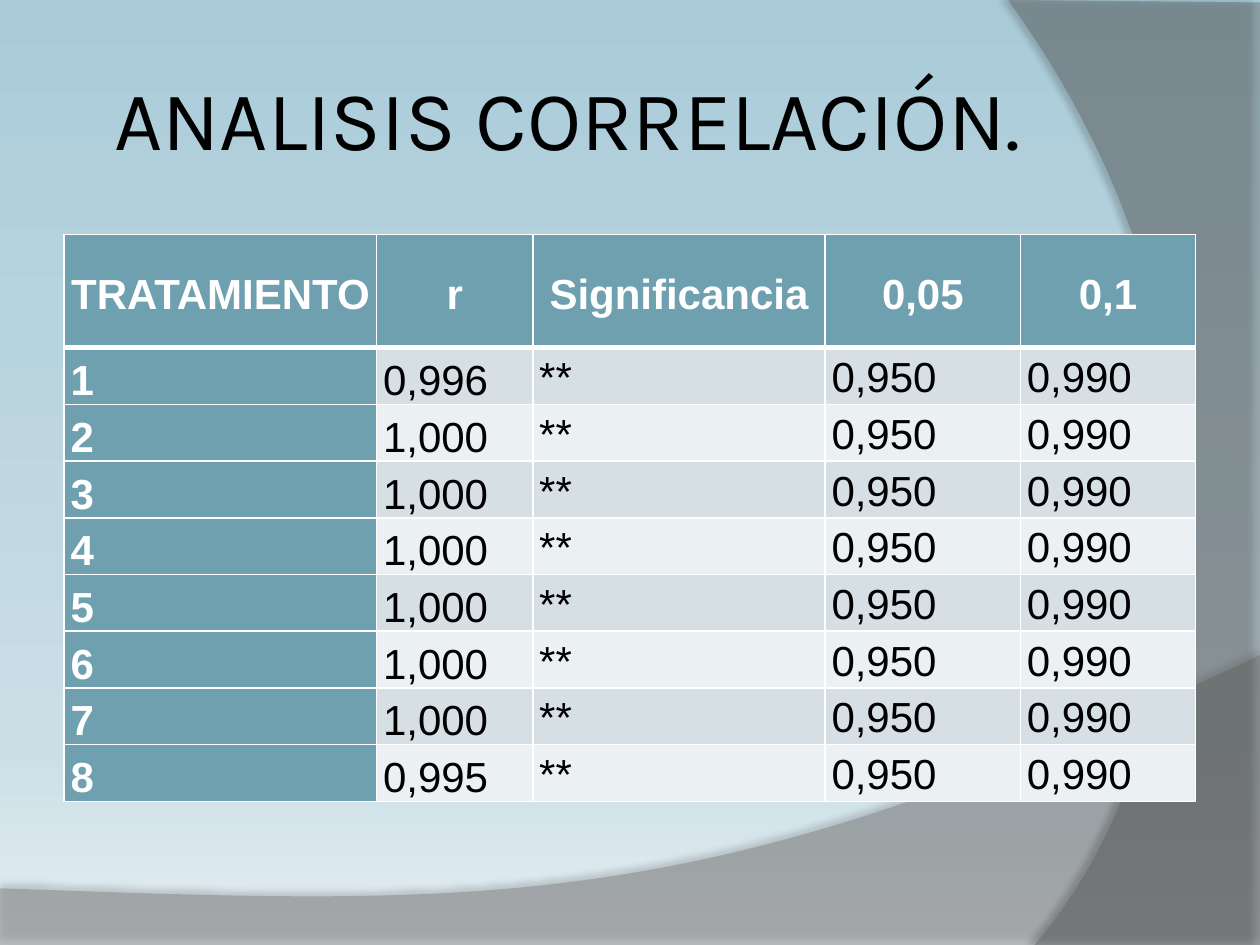
from copy import deepcopy
from dataclasses import dataclass

from lxml import etree
from pptx import Presentation
from pptx.dml.color import RGBColor
from pptx.enum import text as t
from pptx.oxml import ns
from pptx.util import Inches, Pt


@dataclass(frozen=True)
class Theme:
    sky: tuple = ((0, "A9CBD8"), (0.78, "CADEE6"), (1, "E5EEF2"))
    teal: str = "6EA0B0"
    bands: tuple = ("D5DFE4", "EBF0F2")
    white: str = "FFFFFF"
    black: str = "000000"
    head: str = "Karla"
    body: str = "Arial"
    big: int = 48
    mid: int = 24


@dataclass(frozen=True)
class Wave:
    start: tuple
    edges: tuple  # each edge: one point is a line, three are a Bezier curve
    fill: str
    alpha: int
    shade: tuple  # alpha, blur, distance, angle


@dataclass(frozen=True)
class Column:
    head: str
    width: float
    anchor: t.MSO_ANCHOR
    vals: tuple


THEME = Theme()
TOP, LOW = t.MSO_ANCHOR.TOP, t.MSO_ANCHOR.BOTTOM
MID = t.MSO_ANCHOR.MIDDLE
COUNT = 8

WAVES = (
    Wave((0, 7.05), (((0, 7.5),), ((10, 7.5),), ((10, 5.2),),
                     ((5.59, 7.29), (3.91, 7.19), (0, 7.05))),
         "7F7F7F", 45, (35, 4, 3.5, 270)),
    Wave((10, 0.02), (((10, 7.5),), ((8.21, 7.5),),
                      ((9.35, 6.19), (10.18, 3), (8, 0))),
         "5E5E5E", 40, (45, 4, 4, 180)),
)

COLUMNS = (
    Column("TRATAMIENTO", 2.48, LOW, tuple(str(n + 1) for n in range(COUNT))),
    Column("r", 1.24, LOW, ("0,996", *["1,000"] * (COUNT - 2), "0,995")),
    Column("Significancia", 2.32, TOP, ("**",) * COUNT),
    Column("0,05", 1.55, TOP, ("0,950",) * COUNT),
    Column("0,1", 1.39, TOP, ("0,990",) * COUNT),
)


def rgb(code: str) -> RGBColor:
    return RGBColor.from_string(code)


def apply(item, **vals) -> None:
    for key, val in vals.items():
        setattr(item, key, val)


def node(base, tag: str, **attrs):
    return etree.SubElement(base, ns.qn(tag), {k: str(v) for k, v in attrs.items()})


def style(para, color: str, **vals) -> None:
    apply(para.font, **vals)
    para.font.color.rgb = rgb(color)


def paint_sky(slide) -> None:
    fill = slide.background.fill
    fill.gradient()
    fill.gradient_angle = 270
    stops = slide.background._cSld.find(".//" + ns.qn("a:gsLst"))
    stops.append(deepcopy(stops[-1]))
    for stop, (pos, color) in zip(fill.gradient_stops, THEME.sky):
        stop.position = pos
        stop.color.rgb = rgb(color)


def trace(start: tuple, edge: tuple, steps: int = 60) -> list:
    """Return the points of one edge, sampling it if it is a curve."""
    if len(edge) == 1:
        return list(edge)
    knots = list(zip(start, *edge))
    spots = []
    for n in range(1, steps + 1):
        f = n / steps
        mix = ((1 - f) ** 3, 3 * f * (1 - f) ** 2, 3 * f * f * (1 - f), f ** 3)
        spots.append(tuple(sum(m * k for m, k in zip(mix, axis)) for axis in knots))
    return spots


def draw_wave(slide, wave: Wave) -> None:
    spots = [wave.start]
    for edge in wave.edges:
        spots += trace(spots[-1], edge)
    pts = [(Inches(x), Inches(y)) for x, y in spots]
    pen = slide.shapes.build_freeform(*pts[0])
    pen.add_line_segments(pts[1:], close=True)
    shape = pen.convert_to_shape()
    shape.line.fill.background()
    shape.fill.solid()
    shape.fill.fore_color.rgb = rgb(wave.fill)
    props = shape._element.spPr
    node(props.find(".//" + ns.qn("a:srgbClr")), "a:alpha", val=wave.alpha * 1000)
    # Soft outer shadow
    alpha, blur, dist, angle = wave.shade
    shade = node(node(props, "a:effectLst"), "a:outerShdw", blurRad=Pt(blur),
                 dist=Pt(dist), dir=angle * 60000, algn="ctr", rotWithShape=0)
    node(node(shade, "a:srgbClr", val=THEME.black), "a:alpha", val=alpha * 1000)


def set_title(slide, words: str) -> None:
    title = slide.shapes.title
    slide.shapes._spTree.append(title._element)  # in front of the waves
    apply(title, left=Inches(0.5), top=Inches(0.3),
          width=Inches(8.17), height=Inches(1.25))
    pad = Inches(0.05)
    frame = title.text_frame
    apply(frame, text=words, word_wrap=True, auto_size=t.MSO_AUTO_SIZE.NONE,
          vertical_anchor=MID, margin_left=pad, margin_right=pad,
          margin_top=pad, margin_bottom=pad)
    para = frame.paragraphs[0]
    para.alignment = t.PP_ALIGN.CENTER
    style(para, THEME.black, name=THEME.head, size=Pt(THEME.big))


def set_edges(cell, widths: dict) -> None:
    props = cell._tc.get_or_add_tcPr()
    for n, (side, width) in enumerate(widths.items()):
        line = node(props, "a:ln" + side, w=Pt(width))
        node(node(line, "a:solidFill"), "a:srgbClr", val=THEME.white)
        props.insert(n, line)


def fill_cell(cell, words: str, row: int, col: int, anchor: t.MSO_ANCHOR) -> None:
    head = row == 0
    strong = head or col == 0
    apply(cell, text=words, vertical_anchor=MID if head else anchor,
          margin_left=Inches(0.05), margin_right=Inches(0.05),
          margin_top=0, margin_bottom=0)
    para = cell.text_frame.paragraphs[0]
    apply(para, line_spacing=1.15,
          alignment=t.PP_ALIGN.CENTER if head else t.PP_ALIGN.JUSTIFY)
    style(para, THEME.white if strong else THEME.black,
          name=THEME.body, size=Pt(THEME.mid), bold=strong)
    cell.fill.solid()
    cell.fill.fore_color.rgb = rgb(THEME.teal if strong else THEME.bands[(row - 1) % 2])
    set_edges(cell, {"L": 1, "R": 1, "T": 3 if row == 1 else 1, "B": 3 if head else 1})


def draw_table(slide) -> None:
    high = 0.45
    wide = sum(c.width for c in COLUMNS)
    grid = slide.shapes.add_table(COUNT + 1, len(COLUMNS), Inches(0.51), Inches(1.86),
                                  Inches(wide), Inches(high * (COUNT + 2))).table
    for n, row in enumerate(grid.rows):
        row.height = Inches(high if n else 2 * high)
    for c, col in enumerate(COLUMNS):
        grid.columns[c].width = Inches(col.width)
        for r, words in enumerate((col.head, *col.vals)):
            fill_cell(grid.cell(r, c), words, r, c, col.anchor)


def main() -> None:
    deck = Presentation()
    apply(deck, slide_width=Inches(10), slide_height=Inches(7.5))
    slide = deck.slides.add_slide(deck.slide_layouts[5])
    # Backdrop
    paint_sky(slide)
    for wave in WAVES:
        draw_wave(slide, wave)
    # Content
    set_title(slide, "ANALISIS CORRELACIÓN. ")
    draw_table(slide)
    deck.save("out.pptx")


if __name__ == "__main__":
    main()
